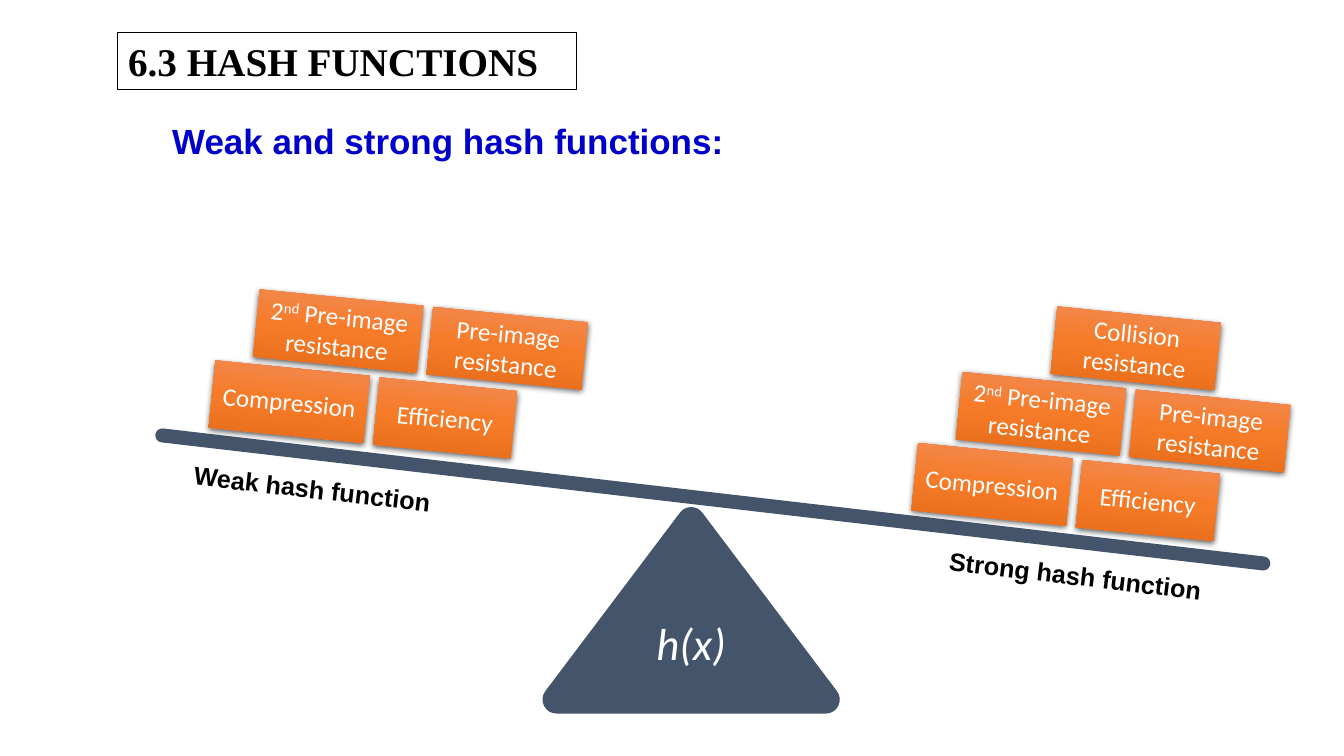
from pptx import Presentation
from pptx.dml.color import RGBColor
from pptx.enum.shapes import MSO_CONNECTOR, MSO_SHAPE
from pptx.enum.text import MSO_ANCHOR, MSO_AUTO_SIZE, PP_ALIGN
from pptx.oxml import parse_xml
from pptx.oxml.ns import nsdecls
from pptx.util import Inches, Pt

LEFT, CENTER = PP_ALIGN.LEFT, PP_ALIGN.CENTER
TOP, MIDDLE = MSO_ANCHOR.TOP, MSO_ANCHOR.MIDDLE
NO_AUTOFIT = MSO_AUTO_SIZE.NONE
RECTANGLE, EXTRACT = MSO_SHAPE.RECTANGLE, MSO_SHAPE.FLOWCHART_EXTRACT
STRAIGHT = MSO_CONNECTOR.STRAIGHT
SLATE, WHITE, BLACK = "44546A", "FFFFFF", "000000"


def color(value):
    return RGBColor.from_string(value)


def write(shape, text, font="Arial", size=18, ink=BLACK, bold=False, italic=False,
          align=LEFT, anchor=TOP, wrap=True):
    frame = shape.text_frame
    frame.auto_size = NO_AUTOFIT
    frame.word_wrap = wrap
    frame.vertical_anchor = anchor
    paragraph = frame.paragraphs[0]
    paragraph.alignment = align
    for index, part in enumerate(text.split("^")):
        run = paragraph.add_run()
        run.text = part
        run.font.name = font
        run.font.size = Pt(size)
        run.font.bold = bold
        run.font.italic = italic
        run.font.color.rgb = color(ink)
        if index % 2:
            run.font._element.set("baseline", "30000")
    return paragraph


prs = Presentation()
prs.slide_width, prs.slide_height = Inches(13.33), Inches(7.5)
slide = prs.slides.add_slide(prs.slide_layouts[5])
shapes = slide.shapes

heading = shapes.title
heading.left, heading.top = Inches(1.17), Inches(0.32)
heading.width, heading.height = Inches(4.55), Inches(0.57)
heading.line.color.rgb = color(BLACK)
heading.line.width = Pt(0.75)
write(heading, "6.3 HASH FUNCTIONS", font="Times New Roman", size=28, bold=True)

subheading = shapes.add_textbox(Inches(1.61), Inches(1.18), Inches(10.59), Inches(0.69))
topic = write(subheading, "Weak and strong hash functions:", size=25, ink="0000CC", bold=True)
topic.line_spacing = 0.9
topic.space_before = Pt(10)

pivot = shapes.add_shape(EXTRACT, Inches(5.52), Inches(5.17), Inches(2.67), Inches(1.77))
pivot.shadow.inherit = False
pivot.fill.solid()
pivot.fill.fore_color.rgb = color(SLATE)
pivot.line.color.rgb = color(SLATE)
pivot.line.width = Pt(20)
pivot.line._ln.append(parse_xml(f"<a:round {nsdecls('a')}/>"))
write(pivot, "h(x)", font="Calibri", size=32, ink=WHITE, italic=True, align=CENTER)

beam = shapes.add_connector(STRAIGHT, Inches(1.61), Inches(4.32), Inches(12.53), Inches(5.59))
beam.line.color.rgb = color(SLATE)
beam.line.width = Pt(10)
beam.line._ln.set("cap", "rnd")
beam._element.spPr.append(parse_xml(f"<a:effectLst {nsdecls('a')}/>"))

stops = "".join(
    f'<a:gs pos="{position}"><a:srgbClr val="{shade}"/></a:gs>'
    for position, shade in [(0, "F18C57"), (50000, "F67B28"), (100000, "E56C19")]
)
brick_fill = (f'<a:gradFill {nsdecls("a")} rotWithShape="1"><a:gsLst>{stops}</a:gsLst>'
              '<a:lin ang="5400000" scaled="0"/></a:gradFill>')
brick_shadow = (f'<a:effectLst {nsdecls("a")}><a:outerShdw blurRad="57150" dist="19050" '
                'dir="5400000" algn="ctr" rotWithShape="0"><a:srgbClr val="000000">'
                '<a:alpha val="63000"/></a:srgbClr></a:outerShdw></a:effectLst>')

weak_properties = [
    ("Compression", 2.1, 3.65, 1.54),
    ("Efficiency", 3.73, 3.81, 1.37),
    ("Pre-image resistance", 4.26, 3.12, 1.54),
    ("2^nd^ Pre-image resistance", 2.54, 2.95, 1.63),
]
strong_properties = weak_properties + [("Collision resistance", 3.48, 2.3, 1.63)]

for properties, shift_x, shift_y in [(strong_properties, 6.97, 0.82), (weak_properties, 0, 0)]:
    for name, x, y, width in properties:
        brick = shapes.add_shape(RECTANGLE, Inches(x + shift_x), Inches(y + shift_y),
                                 Inches(width), Inches(0.67))
        brick.rotation = 5.7
        brick._element.spPr.append(parse_xml(brick_fill))
        brick.line.fill.background()
        brick._element.spPr.append(parse_xml(brick_shadow))
        write(brick, name, font="Calibri", ink=WHITE, align=CENTER, anchor=MIDDLE)

for caption, x, y, width, angle in [
    ("Strong hash function", 9.31, 5.51, 2.74, 6.8),
    ("Weak hash function", 1.82, 4.65, 2.58, 6.6),
]:
    label = shapes.add_textbox(Inches(x), Inches(y), Inches(width), Inches(0.4))
    label.rotation = angle
    write(label, caption, bold=True, wrap=False)

prs.save("out.pptx")
